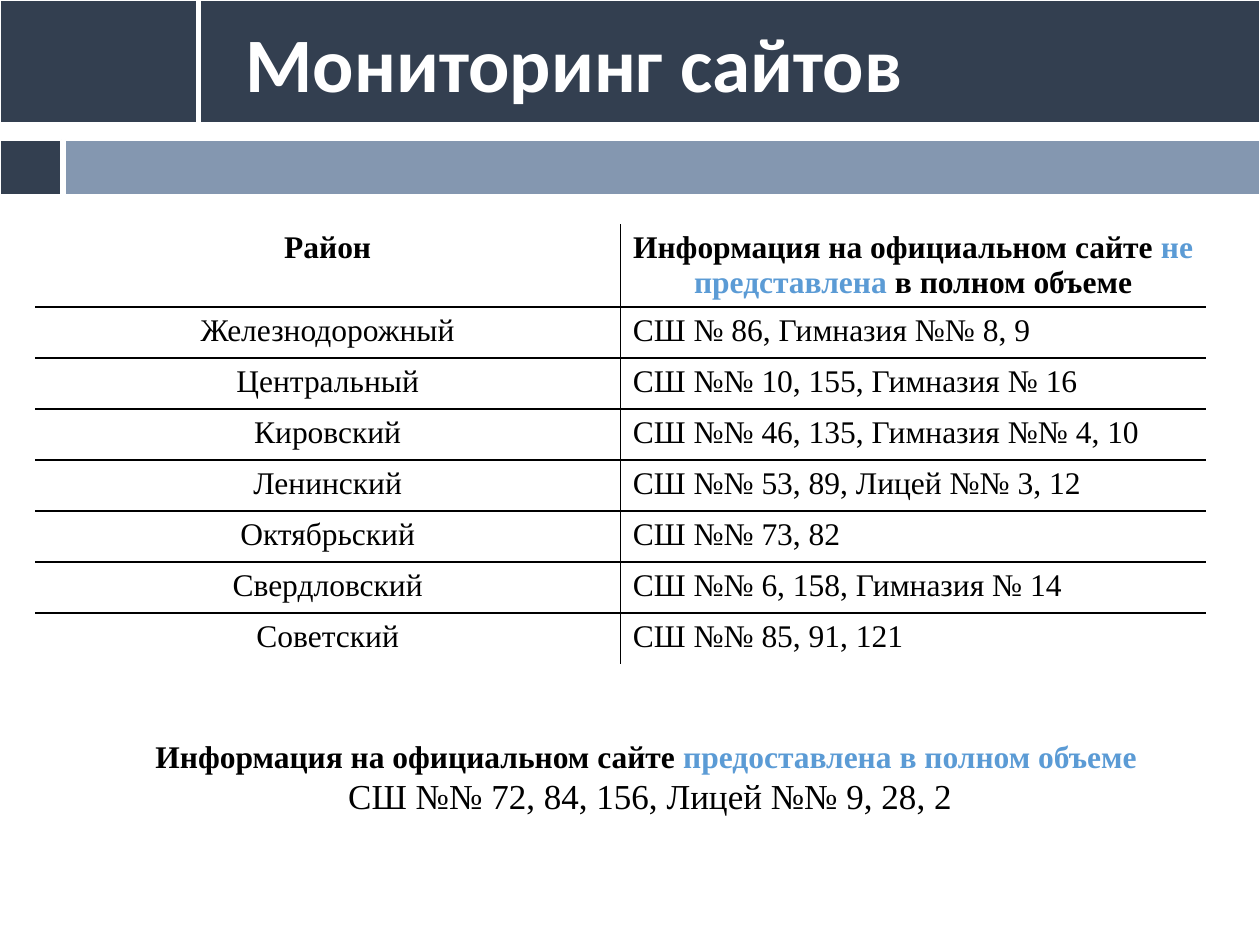
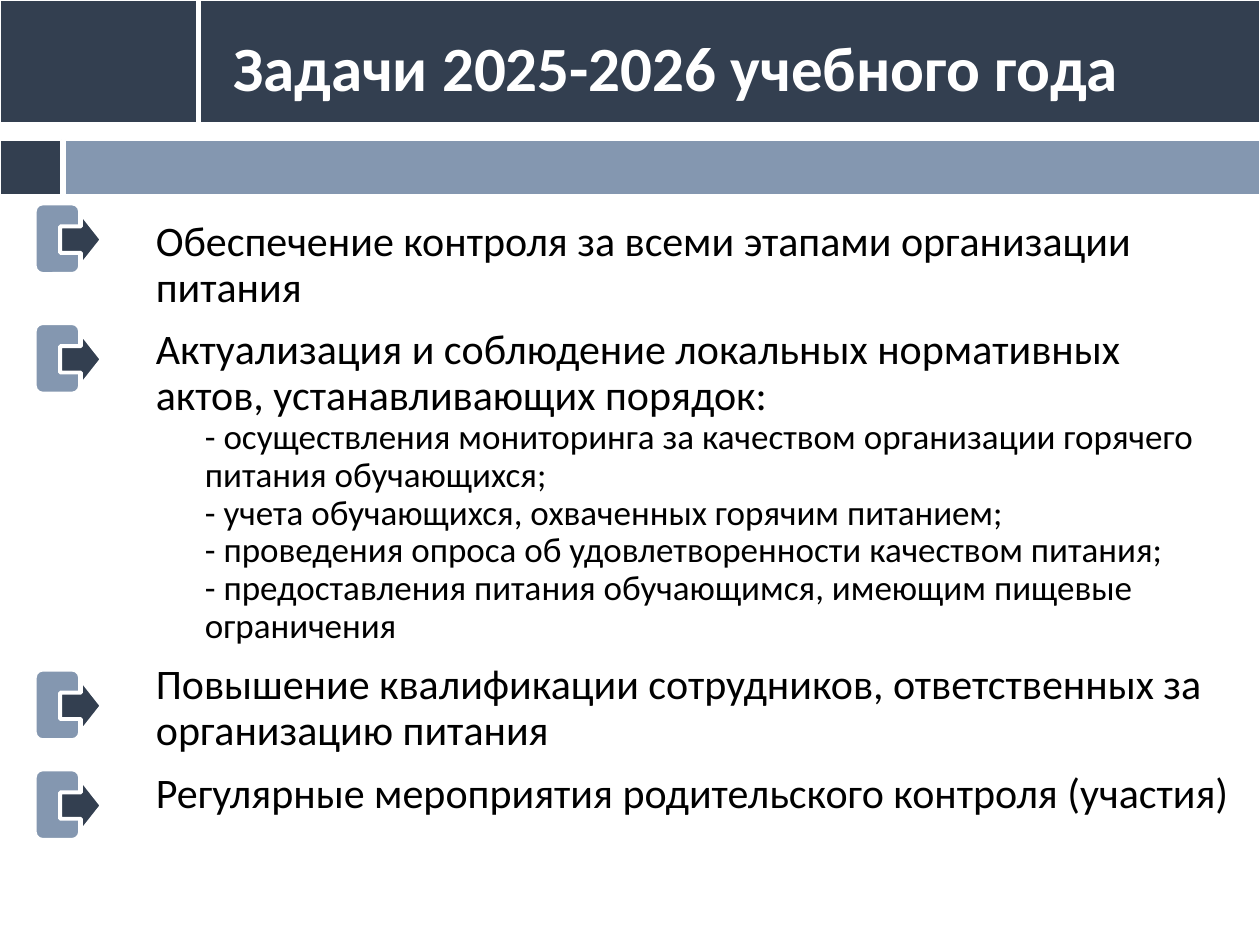
import pptx
import pptx.util
import pptx.dml.color
import pptx.enum.shapes
import pptx.enum.text
import pptx.oxml.ns
from lxml import etree

Pt = pptx.util.Pt
Shape = pptx.enum.shapes.MSO_SHAPE
Align = pptx.enum.text.PP_ALIGN
Anchor = pptx.enum.text.MSO_ANCHOR
Fit = pptx.enum.text.MSO_AUTO_SIZE

NAVY, STEEL, SKY = "333F50", "8497B0", "5B9BD5"
WHITE, BLACK = "FFFFFF", "000000"
SANS, SERIF = "Calibri", "Times New Roman"

BANDS = [
    ((0, 80, 35, 31.5), NAVY),
    ((37.5, 80, 682.5, 31.5), STEEL),
    ((114.5, 0, 605.5, 70), NAVY),
    ((0, 0, 112.5, 70), NAVY),
]
SCHOOLS = [
    ("Железнодорожный", "СШ № 86, Гимназия №№ 8, 9"),
    ("Центральный", "СШ №№ 10, 155, Гимназия № 16"),
    ("Кировский", "СШ №№ 46, 135, Гимназия №№ 4, 10"),
    ("Ленинский", "СШ №№ 53, 89, Лицей №№ 3, 12"),
    ("Октябрьский", "СШ №№ 73, 82"),
    ("Свердловский", "СШ №№ 6, 158, Гимназия № 14"),
    ("Советский", "СШ №№ 85, 91, 121"),
]
TASKS = [
    (0, "Обеспечение контроля за всеми этапами организации питания"),
    (0, "Актуализация и соблюдение локальных нормативных актов, устанавливающих порядок:"),
    (1, "- осуществления мониторинга за качеством организации горячего питания обучающихся;"),
    (1, "- учета обучающихся, охваченных горячим питанием;"),
    (1, "- проведения опроса об удовлетворенности качеством питания;"),
    (1, "- предоставления питания обучающимся, имеющим пищевые ограничения"),
    (0, "Повышение квалификации сотрудников, ответственных за организацию питания"),
    (0, "Регулярные мероприятия родительского контроля (участия)"),
]
MARKS = [116.6, 185, 383, 440]


def paint(color):
    """Turn a hex string into a colour."""
    return pptx.dml.color.RGBColor.from_string(color)


def write(para, text, size=18, font=SERIF, color=BLACK, bold=False,
          align=Align.LEFT, lead=None, before=0, indent=0):
    """Add a run of text to a paragraph and format both."""
    run = para.add_run()
    run.text = text
    run.font.size, run.font.name, run.font.bold = Pt(size), font, bold
    run.font.color.rgb = paint(color)
    para.alignment, para.space_before = align, Pt(before)
    if lead:
        para.line_spacing = lead
    if indent:
        para._p.get_or_add_pPr().set("marL", str(Pt(indent)))


def place(slide, kind, box, color, width=1):
    """Add a filled shape with a white outline."""
    shape = slide.shapes.add_shape(kind, *map(Pt, box))
    shape.shadow.inherit = False
    shape.fill.solid()
    shape.fill.fore_color.rgb = paint(color)
    shape.line.color.rgb = paint(WHITE)
    shape.line.width = Pt(width)
    return shape


def panel(slide, box):
    """Add a wrapping text box and return its frame."""
    frame = slide.shapes.add_textbox(*map(Pt, box)).text_frame
    frame.word_wrap = True
    return frame


def start(deck, text, box, size):
    """Add a slide with the shared bands and a title above them."""
    slide = deck.slides.add_slide(deck.slide_layouts[5])
    for band, color in BANDS:
        place(slide, Shape.RECTANGLE, band, color)
    title = slide.shapes.title
    title.left, title.top, title.width, title.height = map(Pt, box)
    frame = title.text_frame
    frame.word_wrap, frame.auto_size = True, Fit.NONE
    frame.vertical_anchor = Anchor.MIDDLE
    write(frame.paragraphs[0], text, size=size, font=SANS, color=WHITE,
          bold=True, lead=0.9)
    slide.shapes.element.append(title.element)
    return slide


def border(cell, sides):
    """Draw black lines on the named sides and clear the others."""
    props = cell._tc.get_or_add_tcPr()
    for side in "LRTB":
        line = etree.SubElement(props, pptx.oxml.ns.qn("a:ln" + side), w=str(Pt(1)))
        kind = "a:solidFill" if side in sides else "a:noFill"
        fill = etree.SubElement(line, pptx.oxml.ns.qn(kind))
        if side in sides:
            etree.SubElement(fill, pptx.oxml.ns.qn("a:srgbClr"), val=BLACK)
    cell.fill.background()


def grid(slide, box):
    """Add the table of districts and schools."""
    last = len(SCHOOLS)
    table = slide.shapes.add_table(last + 1, 2, *map(Pt, box)).table
    table.first_row = table.horz_banding = False
    head = 47.5
    for column in table.columns:
        column.width = Pt(box[2] / 2)
    for index, row in enumerate(table.rows):
        row.height = Pt((box[3] - head) / last if index else head)
        for col, cell in enumerate(row.cells):
            sides = "RL"[col] + "T" * (index > 0) + "B" * (index < last)
            border(cell, sides)
            if index:
                write(cell.text_frame.paragraphs[0], SCHOOLS[index - 1][col],
                      align=Align.LEFT if col else Align.CENTER)
    left, right = (cell.text_frame.paragraphs[0] for cell in table.rows[0].cells)
    style = dict(bold=True, align=Align.CENTER)
    write(left, "Район", **style)
    write(right, "Информация на официальном сайте ", **style)
    write(right, "не представлена ", color=SKY, **style)
    write(right, "в полном объеме", **style)


def note(slide, box):
    """Add the summary below the table."""
    frame = panel(slide, box)
    first, second = frame.paragraphs[0], frame.add_paragraph()
    style = dict(bold=True, align=Align.CENTER)
    write(first, "Информация на официальном сайте ", **style)
    write(first, "предоставлена в полном объеме ", color=SKY, **style)
    write(second, "СШ №№ 72, 84, 156, Лицей №№ 9, 28, 2", size=20,
          align=Align.CENTER)


def tasks(slide, box):
    """Add the list of tasks with its second level."""
    frame = panel(slide, box)
    for index, (level, text) in enumerate(TASKS):
        para = frame.add_paragraph() if index else frame.paragraphs[0]
        write(para, text, size=20 if level else 24, font=SANS, lead=0.9,
              before=0 if level else 10, indent=28 * level)


def mark(slide, left, top):
    """Add a rounded block with an arrow leaving it."""
    place(slide, Shape.ROUNDED_RECTANGLE, (left, top, 25.2, 39.6), STEEL, 1.5)
    arrow = place(slide, Shape.DOWN_ARROW, (left + 11, top + 8.4, 30.2, 23.8), NAVY, 2.25)
    arrow.rotation = 270


def main():
    """Build both slides and save the deck."""
    deck = pptx.Presentation()
    deck.slide_width, deck.slide_height = Pt(720), Pt(540)

    slide = start(deck, "Мониторинг сайтов", (133.2, -13.7, 620.6, 104.4), 44)
    grid(slide, (20, 128, 669, 251.5))
    note(slide, (62.6, 417.6, 617.8, 53.3))

    slide = start(deck, "Задачи 2025-2026 учебного года", (126, 16.6, 524.2, 47.5), 36)
    tasks(slide, (82, 122.4, 629.3, 359.3))
    for top in MARKS:
        mark(slide, 20.2, top)

    deck.save("out.pptx")


if __name__ == "__main__":
    main()
